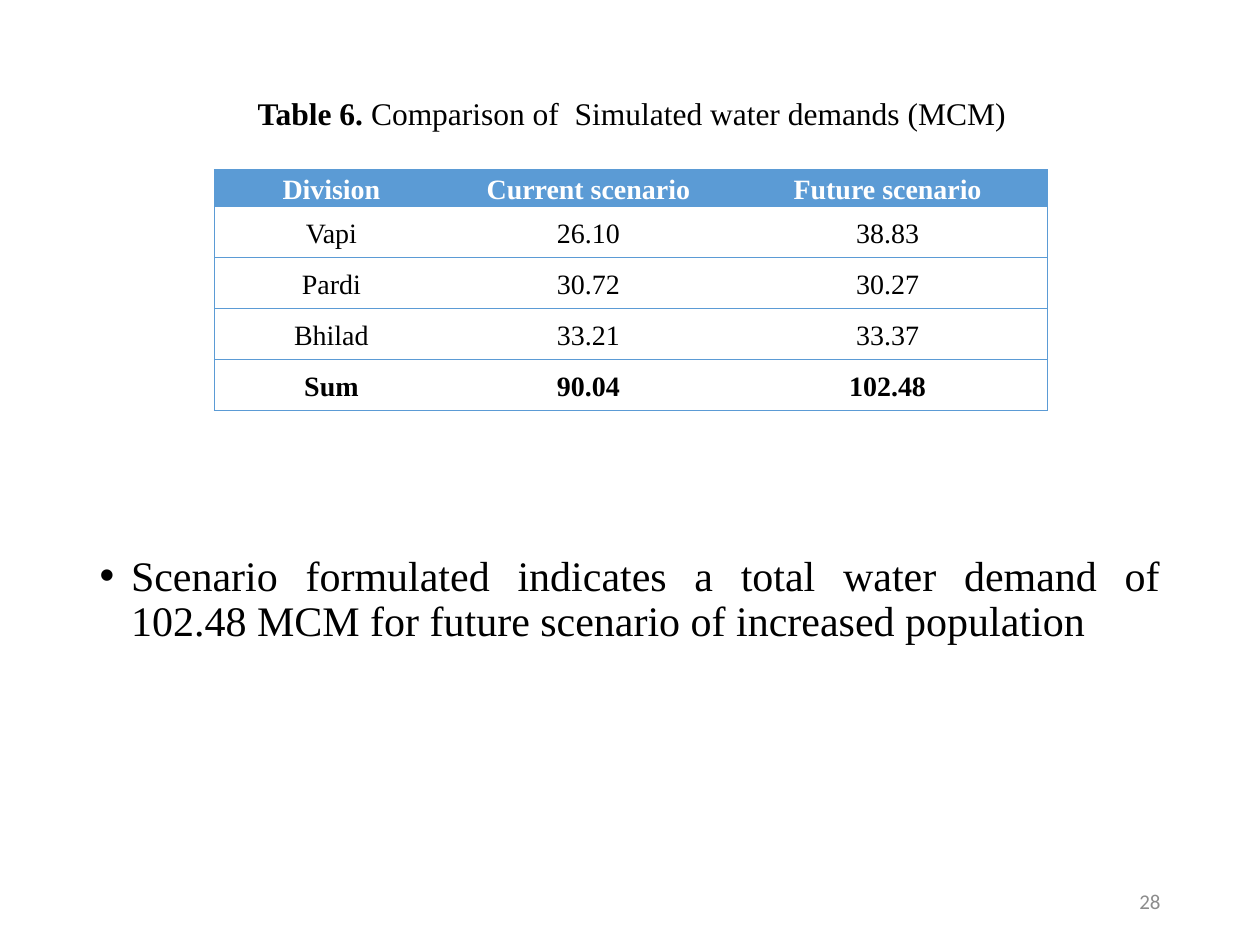
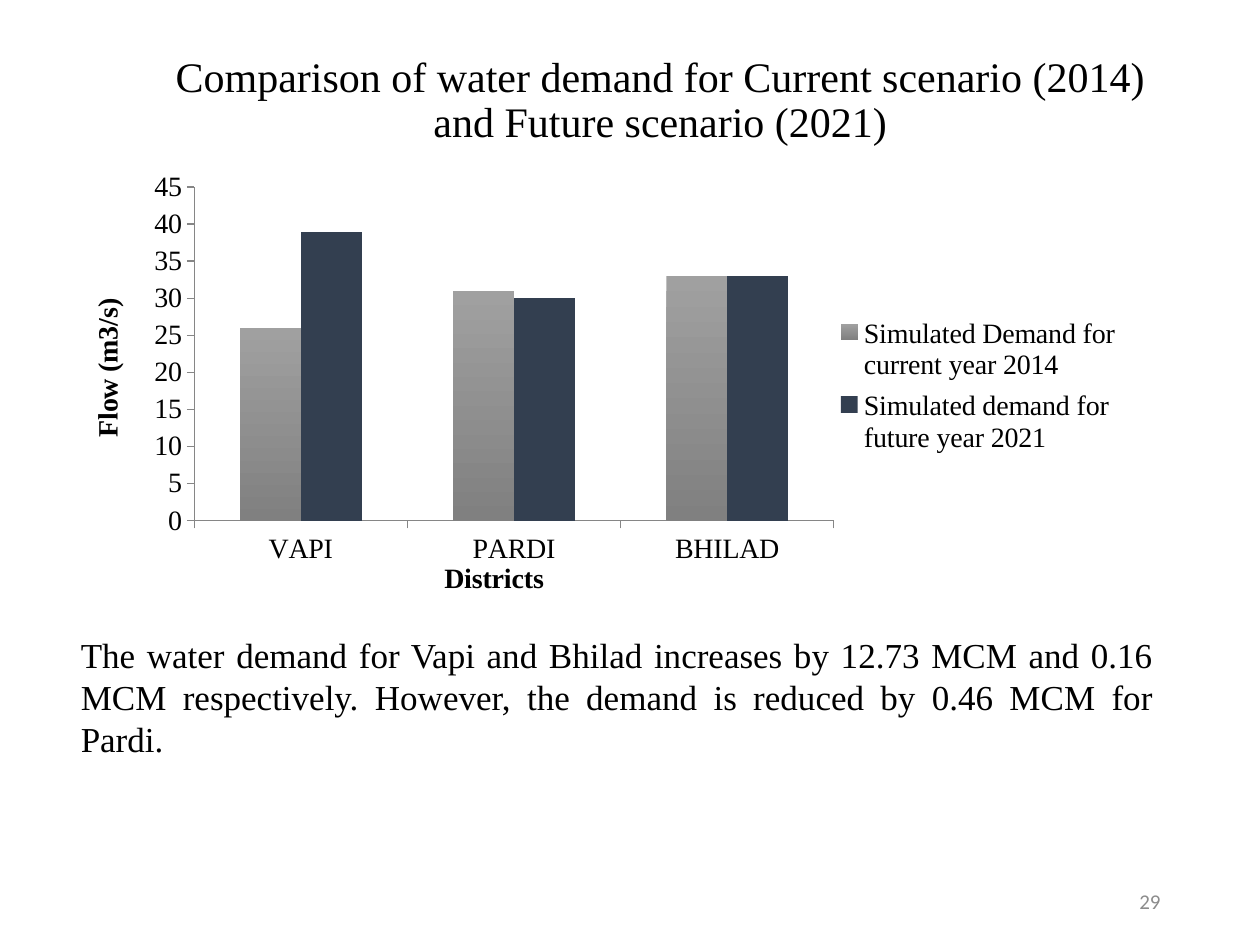
from dataclasses import dataclass

from pptx import Presentation
from pptx.chart.data import CategoryChartData
from pptx.dml.color import RGBColor
from pptx.enum.chart import XL_CHART_TYPE as ChartType, XL_LEGEND_POSITION as LegendPosition
from pptx.enum.chart import XL_TICK_MARK as TickMark
from pptx.enum.text import MSO_ANCHOR as Anchor, MSO_AUTO_SIZE as AutoSize, PP_ALIGN as Align
from pptx.oxml import parse_xml
from pptx.oxml.ns import nsdecls, qn
from pptx.util import Inches, Pt

CELL = 0.25
COLUMNS, ROWS = 40, 30
SERIF, SANS = "Times New Roman", "Calibri"
BLACK, WHITE, BLUE, NAVY = "000000", "FFFFFF", "5B9BD5", "333F50"
LIGHT_GRAY, DARK_GRAY = "A0A0A0", "808080"
AXIS_GRAY, NUMBER_GRAY = "868686", "8C8C8C"
TITLE_AND_CONTENT, TITLE_ONLY = 1, 5

DEMAND_ROWS = [
    ["Division", "Current scenario", "Future scenario"],
    ["Vapi", "26.10", "38.83"],
    ["Pardi", "30.72", "30.27"],
    ["Bhilad", "33.21", "33.37"],
    ["Sum", "90.04", "102.48"],
]


@dataclass
class Box:
    """A region measured in columns and rows of the slide grid."""
    column: float
    row: float
    width: float
    height: float

    def lengths(self):
        """Return left, top, width and height as slide lengths."""
        return [Inches(n * CELL) for n in (self.column, self.row, self.width, self.height)]


def color(value):
    """Turn a hex string into a colour."""
    return RGBColor.from_string(value)


def style_font(font, size, name=SERIF, hue=BLACK, bold=False):
    """Set the look of a font."""
    font.size, font.name, font.bold = Pt(size), name, bold
    font.color.rgb = color(hue)


def style_frame(frame, size, align, spacing=1.0, **look):
    """Format every paragraph and run of a text frame."""
    frame.word_wrap = True
    frame.auto_size = AutoSize.NONE
    for para in frame.paragraphs:
        para.alignment, para.line_spacing, para.space_before = align, spacing, Pt(0)
        for span in para.runs:
            style_font(span.font, size, **look)


def place(shape, box):
    """Move a shape into a box."""
    shape.left, shape.top, shape.width, shape.height = box.lengths()


def add_text(page, box, text, size, align, anchor=Anchor.TOP, **look):
    """Add a wrapped text box."""
    frame = page.shapes.add_textbox(*box.lengths()).text_frame
    frame.text = text
    frame.vertical_anchor = anchor
    style_frame(frame, size, align, **look)


def add_page(deck, layout, number):
    """Add a slide with its page number."""
    page = deck.slides.add_slide(deck.slide_layouts[layout])
    add_text(page, Box(28.24, 27.8, 9, 1.6), str(number), 12, Align.RIGHT,
             Anchor.MIDDLE, name=SANS, hue=NUMBER_GRAY)
    return page


def set_title(page, box, text, size, label=""):
    """Fill the title placeholder, with an optional bold label in front."""
    title = page.shapes.title
    place(title, box)
    frame = title.text_frame
    frame.text = label or text
    if label:
        frame.paragraphs[0].add_run().text = text
    frame.vertical_anchor = Anchor.MIDDLE
    style_frame(frame, size, Align.CENTER, 0.9)
    if label:
        frame.paragraphs[0].runs[0].font.bold = True


def set_bullet(page, box, text):
    """Fill the body placeholder with one justified bullet."""
    body = page.placeholders[1]
    place(body, box)
    body.text_frame.text = text
    style_frame(body.text_frame, 24, Align.JUSTIFY, 0.9)
    properties = body.text_frame.paragraphs[0]._p.get_or_add_pPr()
    properties.set("marL", str(Inches(0.25)))
    properties.set("indent", str(-Inches(0.25)))


def set_borders(cell, visible):
    """Draw the named sides of a cell and hide the others."""
    properties = cell._tc.get_or_add_tcPr()
    for position, side in enumerate("LRTB"):
        paint = (f'<a:solidFill><a:srgbClr val="{BLUE}"/></a:solidFill>'
                 if side in visible else "<a:noFill/>")
        line = parse_xml(f'<a:ln{side} {nsdecls("a")} w="{Pt(0.5)}">{paint}</a:ln{side}>')
        properties.insert(position, line)


def format_cell(cell, text, header, bold, sides):
    """Write and style one table cell."""
    cell.text = text
    cell.vertical_anchor = Anchor.MIDDLE
    cell.margin_left = cell.margin_right = Inches(0.07)
    cell.margin_top = cell.margin_bottom = 0
    cell.fill.solid()
    cell.fill.fore_color.rgb = color(BLUE if header else WHITE)
    para = cell.text_frame.paragraphs[0]
    para.alignment, para.line_spacing = Align.CENTER, 1.15
    style_font(para.runs[0].font, 16, hue=WHITE if header else BLACK, bold=bold)
    set_borders(cell, sides)


def add_demand_table(page, box, rows):
    """Add the demand table with a header row and a bold last row."""
    last_row, last_column = len(rows) - 1, len(rows[0]) - 1
    table = page.shapes.add_table(len(rows), len(rows[0]), *box.lengths()).table
    table.horz_banding = False
    for column, width in zip(table.columns, (7.44, 8.88, 10.12)):
        column.width = Inches(width * CELL)
    header_height = 1.18
    for r, values in enumerate(rows):
        height = (box.height - header_height) / last_row if r else header_height
        table.rows[r].height = Inches(height * CELL)
        for c, value in enumerate(values):
            sides = "TB" + "L" * (c == 0) + "R" * (c == last_column)
            format_cell(table.cell(r, c), value, r == 0, r in (0, last_row), sides)


def format_axis(axis, title):
    """Title an axis and draw its line and ticks."""
    axis.axis_title.text_frame.text = title
    style_font(axis.axis_title.text_frame.paragraphs[0].runs[0].font, 16, bold=True)
    axis.major_tick_mark, axis.minor_tick_mark = TickMark.OUTSIDE, TickMark.NONE
    axis.format.line.color.rgb = color(AXIS_GRAY)
    axis.format.line.width = Pt(0.75)


def set_layout(part, index, inner, outer, target=""):
    """Fix a chart part in an inner box, measured from the outer box."""
    for layout in part.findall(qn("c:layout")):
        part.remove(layout)
    shares = {"x": inner.column / outer.width, "y": inner.row / outer.height,
              "w": inner.width / outer.width, "h": inner.height / outer.height}
    sizes = "".join(f'<c:{tag} val="{share:.4f}"/>' for tag, share in shares.items())
    part.insert(index, parse_xml(
        f'<c:layout {nsdecls("c")}><c:manualLayout>{target}'
        f'<c:xMode val="edge"/><c:yMode val="edge"/>{sizes}</c:manualLayout></c:layout>'))


def add_demand_chart(page, box):
    """Add the clustered columns of current and future demand."""
    divisions = DEMAND_ROWS[1:-1]
    data = CategoryChartData()
    data.categories = [name.upper() for name, _, _ in divisions]
    data.add_series("Simulated Demand for current year 2014",
                    [round(float(now)) for _, now, _ in divisions])
    data.add_series("Simulated demand for future year 2021",
                    [round(float(later)) for _, _, later in divisions])
    chart = page.shapes.add_chart(ChartType.COLUMN_CLUSTERED, *box.lengths(), data).chart
    style_font(chart.font, 16)
    chart.has_title = False
    chart.has_legend = True
    chart.legend.position = LegendPosition.RIGHT
    chart.legend.include_in_layout = False
    set_layout(chart._chartSpace.chart.plotArea, 0, Box(3.69, 1.54, 20.3, 10.6), box,
               '<c:layoutTarget val="inner"/>')
    set_layout(chart.legend._element, 1, Box(23.87, 5.4, 9.4, 4.9), box)

    format_axis(chart.category_axis, "Districts")
    format_axis(chart.value_axis, "Flow (m3/s)")
    chart.value_axis.minimum_scale, chart.value_axis.maximum_scale = 0, 45
    chart.value_axis.major_unit = 5
    chart.value_axis.tick_labels.number_format = "0"
    chart.value_axis.tick_labels.number_format_is_linked = False
    chart.value_axis.major_gridlines.format.line.color.rgb = color(WHITE)

    plot = chart.plots[0]
    plot.gap_width, plot.overlap, plot.vary_by_categories = 150, 0, False
    current, future = [series.format.fill for series in plot.series]
    current.gradient()
    current.gradient_angle = 270
    for stop, hue in zip(current.gradient_stops, (LIGHT_GRAY, DARK_GRAY)):
        stop.color.rgb = color(hue)
    future.solid()
    future.fore_color.rgb = color(NAVY)


def build_table_page(deck):
    """Build the slide with the demand table."""
    page = add_page(deck, TITLE_AND_CONTENT, 28)
    set_title(page, Box(3.08, 2.86, 33.96, 1.6),
              "Comparison of  Simulated water demands (MCM)", 18, "Table 6. ")
    add_demand_table(page, Box(6.8, 5.38, 26.44, 7.66), DEMAND_ROWS)
    set_bullet(page, Box(2.76, 17.42, 34.48, 10.6),
               "Scenario formulated indicates a total water demand of 102.48 MCM "
               "for future scenario of increased population")


def build_chart_page(deck):
    """Build the slide with the demand chart."""
    page = add_page(deck, TITLE_ONLY, 29)
    add_demand_chart(page, Box(2.48, 4.4, 34.52, 14.76))
    set_title(page, Box(4.36, 1.82, 33.2, 2.8),
              "Comparison of water demand for Current scenario (2014) "
              "and Future scenario (2021)", 24)
    add_text(page, Box(2.17, 19.92, 34.84, 4.44),
             "The water demand for Vapi and Bhilad increases by 12.73 MCM and 0.16 MCM "
             "respectively. However, the demand is reduced by 0.46 MCM for Pardi.",
             20, Align.JUSTIFY)


def main():
    """Build and save the deck."""
    deck = Presentation()
    deck.slide_width, deck.slide_height = Inches(COLUMNS * CELL), Inches(ROWS * CELL)
    build_table_page(deck)
    build_chart_page(deck)
    deck.save("out.pptx")


if __name__ == "__main__":
    main()
